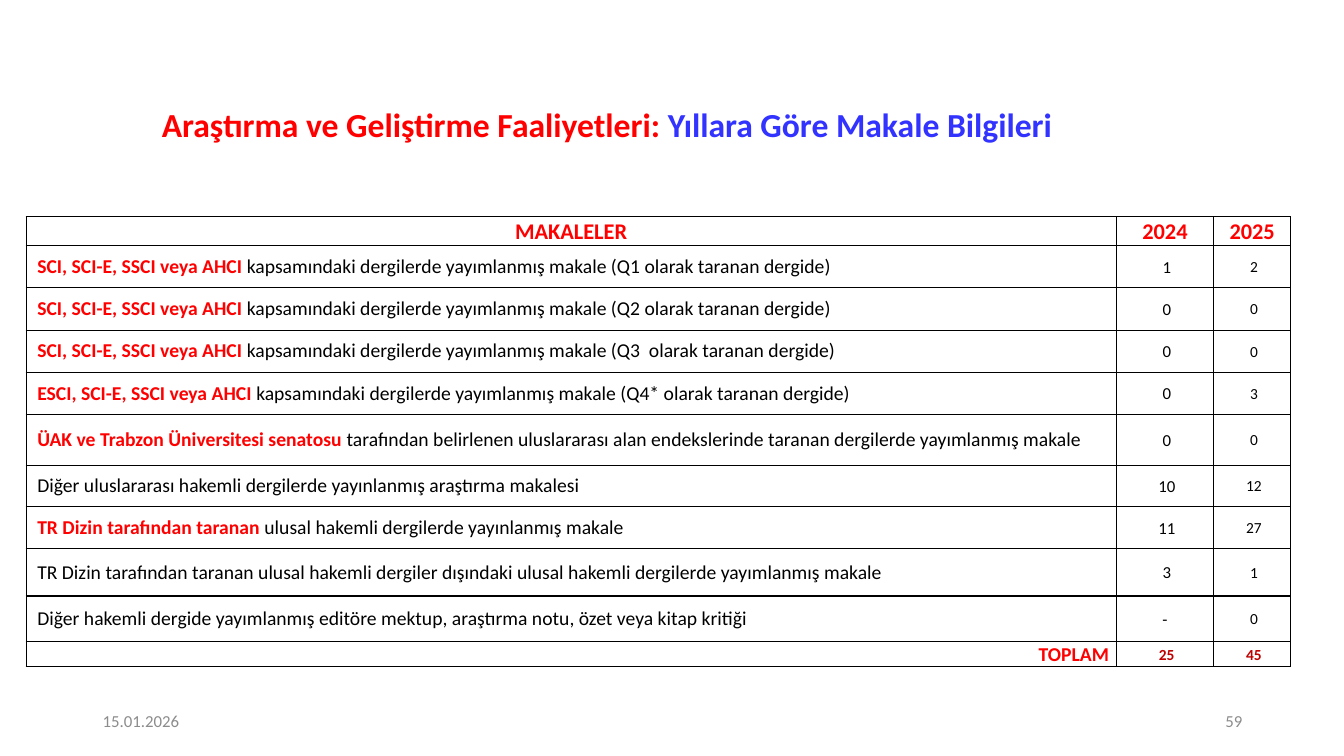
from dataclasses import dataclass

from lxml.etree import SubElement
from pptx import Presentation
from pptx.dml.color import RGBColor
from pptx.enum.text import MSO_ANCHOR as Anchor, PP_ALIGN as Align
from pptx.oxml import parse_xml
from pptx.oxml.ns import nsdecls, qn
from pptx.util import Inches, Pt


@dataclass(frozen=True)
class Theme:
    font: str = "Calibri"
    red: str = "FF0000"
    dark_red: str = "C00000"
    blue: str = "3333FF"
    black: str = "000000"
    white: str = "FFFFFF"
    grey: str = "8C8C8C"
    title: int = 24
    header: int = 16
    body: int = 14
    small: int = 12
    tiny: int = 11


@dataclass(frozen=True)
class Article:
    height: float
    lead: str
    rest: str
    y2024: str
    y2025: str


T = Theme()
COLS = (10.81, 0.97, 0.76)
HEADER_HEIGHT, TOTAL_HEIGHT = 0.28, 0.24
INDEXES = "SCI, SCI-E, SSCI veya AHCI "
PUBLISHED = "kapsamındaki dergilerde yayımlanmış makale "
ARTICLES = (
    Article(0.42, INDEXES, PUBLISHED + "(Q1 olarak taranan dergide)", " 1", " 2"),
    Article(0.42, INDEXES, PUBLISHED + "(Q2 olarak taranan dergide)", " 0", " 0"),
    Article(0.42, INDEXES, PUBLISHED + "(Q3  olarak taranan dergide)", " 0", " 0"),
    Article(0.42, "E" + INDEXES, PUBLISHED + "(Q4* olarak taranan dergide)", " 0", " 3"),
    Article(0.5, "ÜAK ve Trabzon Üniversitesi senatosu ",
            "tarafından belirlenen uluslararası alan endekslerinde taranan "
            "dergilerde yayımlanmış makale", " 0", " 0"),
    Article(0.41, "", "Diğer uluslararası hakemli dergilerde yayınlanmış araştırma makalesi",
            " 10", " 12"),
    Article(0.42, "TR Dizin tarafından taranan ",
            "ulusal hakemli dergilerde yayınlanmış makale", " 11", " 27"),
    Article(0.47, "", "TR Dizin tarafından taranan ulusal hakemli dergiler dışındaki "
            "ulusal hakemli dergilerde yayımlanmış makale", " 3", " 1"),
    Article(0.45, "", "Diğer hakemli dergide yayımlanmış editöre mektup, araştırma notu, "
            "özet veya kitap kritiği", "-", " 0"),
)


def add_run(p, text: str, *, size: int, color: str = T.black, bold: bool = False) -> None:
    r = p.add_run()
    r.text = text
    r.font.name = T.font
    r.font.size = Pt(size)
    r.font.bold = bold
    r.font.color.rgb = RGBColor.from_string(color)


def add_box(s, left: float, top: float, width: float, height: float, *,
            align: Align, anchor: Anchor = Anchor.MIDDLE):
    tf = s.shapes.add_textbox(*map(Inches, (left, top, width, height))).text_frame
    tf.word_wrap = True
    tf.vertical_anchor = anchor
    p = tf.paragraphs[0]
    p.alignment = align
    return p


def add_borders(cell) -> None:
    pr = cell._tc.get_or_add_tcPr()
    for i, side in enumerate(("lnL", "lnR", "lnT", "lnB")):
        ln = parse_xml(f'<a:{side} {nsdecls("a")} w="{Pt(1)}"/>')
        fill = SubElement(ln, qn("a:solidFill"))
        SubElement(fill, qn("a:srgbClr")).set("val", T.black)
        pr.insert(i, ln)


def prepare_cell(cell, *, align: Align = Align.CENTER, indent: float = 0, spacing: float = 1.07):
    cell.fill.solid()
    cell.fill.fore_color.rgb = RGBColor.from_string(T.white)
    add_borders(cell)
    cell.vertical_anchor = Anchor.MIDDLE
    cell.margin_left = Inches(0.07 + indent)
    cell.margin_right = Inches(0.07)
    cell.margin_top = cell.margin_bottom = 0
    p = cell.text_frame.paragraphs[0]
    p.alignment = align
    p.line_spacing = spacing
    return p


def add_articles(s) -> None:
    heights = [HEADER_HEIGHT, *(a.height for a in ARTICLES), TOTAL_HEIGHT]
    table = s.shapes.add_table(len(heights), len(COLS), Inches(0.26), Inches(2.15),
                               Inches(sum(COLS)), Inches(sum(heights))).table
    table.first_row = table.horz_banding = False
    for col, width in zip(table.columns, COLS):
        col.width = Inches(width)
    for row, height in zip(table.rows, heights):
        row.height = Inches(height)

    for col, text in enumerate(("MAKALELER", "2024", "2025")):
        add_run(prepare_cell(table.cell(0, col)), text, size=T.header, color=T.red, bold=True)

    for row, a in enumerate(ARTICLES, 1):
        p = prepare_cell(table.cell(row, 0), align=Align.LEFT, indent=0.04, spacing=1.0)
        if a.lead:
            add_run(p, a.lead, size=T.body, color=T.red, bold=True)
        add_run(p, a.rest, size=T.body)
        add_run(prepare_cell(table.cell(row, 1)), a.y2024, size=T.small)
        add_run(prepare_cell(table.cell(row, 2)), a.y2025, size=T.tiny)

    last = len(heights) - 1
    add_run(prepare_cell(table.cell(last, 0), align=Align.RIGHT), "TOPLAM",
            size=T.body, color=T.red, bold=True)
    for col, total in enumerate((" 25", " 45"), 1):
        add_run(prepare_cell(table.cell(last, col)), total,
                size=T.tiny, color=T.dark_red, bold=True)


def main() -> None:
    prs = Presentation()
    prs.slide_width, prs.slide_height = Inches(13.33), Inches(7.5)
    s = prs.slides.add_slide(prs.slide_layouts[6])

    p = add_box(s, 0.36, 0.85, 11.32, 0.64, align=Align.CENTER, anchor=Anchor.BOTTOM)
    p.line_spacing = 0.9
    add_run(p, "Araştırma ve Geliştirme Faaliyetleri: ", size=T.title, color=T.red, bold=True)
    add_run(p, "Yıllara Göre Makale Bilgileri", size=T.title, color=T.blue, bold=True)

    add_articles(s)
    for left, text, align in ((0.92, "15.01.2026", Align.LEFT), (9.42, "59", Align.RIGHT)):
        add_run(add_box(s, left, 6.95, 3, 0.4, align=align), text, size=T.small, color=T.grey)
    prs.save("out.pptx")


if __name__ == "__main__":
    main()
